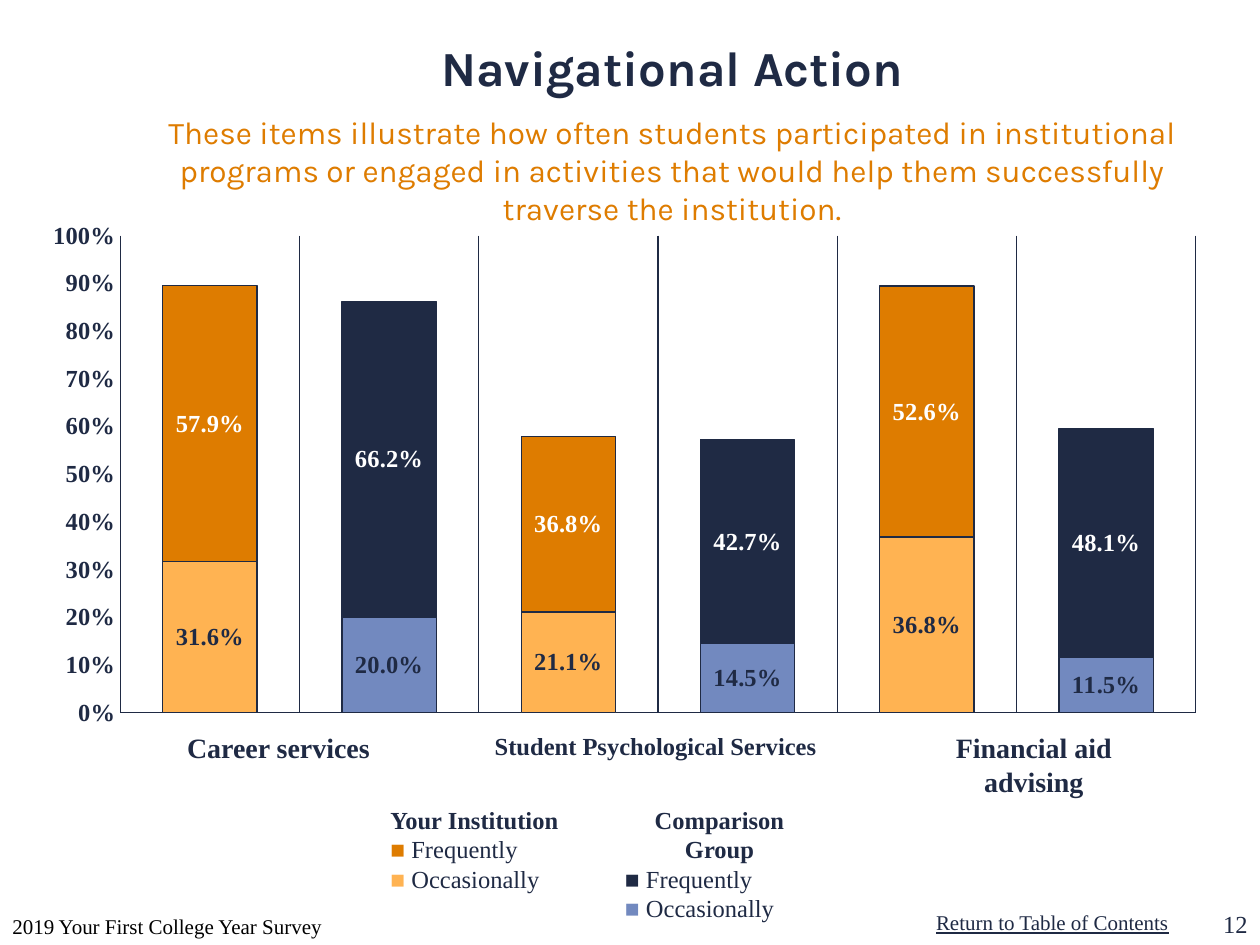
from dataclasses import dataclass

import pptx
import pptx.chart.data
import pptx.dml.color
import pptx.enum.chart
import pptx.enum.text
import pptx.oxml
import pptx.util

Cm = pptx.util.Cm
Pt = pptx.util.Pt
ALIGN = pptx.enum.text.PP_ALIGN
ANCHOR = pptx.enum.text.MSO_ANCHOR


@dataclass(frozen=True)
class Theme:
    navy: str = "1F2A44"
    blue: str = "7289BF"
    orange: str = "DE7C00"
    amber: str = "FFB352"
    white: str = "FFFFFF"
    black: str = "000000"
    heading_font: str = "Karla"
    body_font: str = "Times New Roman"
    title_size: int = 28
    subtitle_size: int = 18
    category_size: int = 16
    text_size: int = 14
    footer_size: int = 12


THEME = Theme()


@dataclass(frozen=True)
class Frame:
    """A place on the page, in centimetres."""
    left: float
    top: float
    width: float
    height: float

    def lengths(self) -> tuple:
        return Cm(self.left), Cm(self.top), Cm(self.width), Cm(self.height)


@dataclass(frozen=True)
class Label:
    text: str
    frame: Frame
    size: int
    align: ALIGN = ALIGN.LEFT
    color: str = THEME.navy
    bold: bool = False
    underline: bool = False
    anchor: ANCHOR = ANCHOR.TOP


@dataclass(frozen=True)
class Legend:
    heading: str
    frame: Frame
    align: ALIGN
    indent: float
    frequent_color: str
    occasional_color: str


@dataclass(frozen=True)
class Answer:
    """One stacked series: own bars and comparison bars alternate."""
    name: str
    values: tuple
    own_color: str
    comparison_color: str
    label_color: str


CATEGORY_TOP = 14.61
LABELS = (
    Label("Career services", Frame(2.54, CATEGORY_TOP, 6.15, 0.94),
          THEME.category_size, ALIGN.CENTER, bold=True),
    Label("Student Psychological Services", Frame(9.5, CATEGORY_TOP, 7.44, 0.86),
          THEME.text_size, ALIGN.CENTER, bold=True),
    Label("Financial aid advising", Frame(17.98, CATEGORY_TOP, 5.72, 1.63),
          THEME.category_size, ALIGN.CENTER, bold=True),
    Label("2019 Your First College Year Survey", Frame(0, 17.78, 8.05, 1.27),
          THEME.footer_size, color=THEME.black, anchor=ANCHOR.BOTTOM),
    Label("Return to Table of Contents", Frame(18.62, 18.21, 5.4, 0.76),
          THEME.footer_size, underline=True),
    Label("12", Frame(24.13, 17.78, 1.27, 1.27),
          THEME.text_size, ALIGN.RIGHT, anchor=ANCHOR.BOTTOM),
)
LEGENDS = (
    Legend("Your Institution", Frame(7.62, 16.1, 4.39, 2.64), ALIGN.LEFT, 0,
           THEME.orange, THEME.amber),
    Legend("Comparison Group", Frame(12.22, 16.1, 4.57, 2.64), ALIGN.CENTER, 0.13,
           THEME.navy, THEME.blue),
)
ANSWERS = (
    Answer("Occasionally", (0.316, 0.2, 0.211, 0.145, 0.368, 0.115),
           THEME.amber, THEME.blue, THEME.navy),
    Answer("Frequently", (0.579, 0.662, 0.368, 0.427, 0.526, 0.481),
           THEME.orange, THEME.navy, THEME.white),
)


def rgb(color: str) -> pptx.dml.color.RGBColor:
    return pptx.dml.color.RGBColor.from_string(color)


def style_font(font, size: int, color: str, bold: bool = False,
               name: str = THEME.body_font) -> None:
    font.name, font.size, font.bold = name, Pt(size), bold
    font.color.rgb = rgb(color)


def add_text_frame(page, frame: Frame, anchor: ANCHOR = ANCHOR.TOP):
    text_frame = page.shapes.add_textbox(*frame.lengths()).text_frame
    text_frame.word_wrap = True
    text_frame.vertical_anchor = anchor
    return text_frame


def add_label(page, label: Label) -> None:
    para = add_text_frame(page, label.frame, label.anchor).paragraphs[0]
    para.text, para.alignment = label.text, label.align
    style_font(para.font, label.size, label.color, label.bold)
    para.font.underline = label.underline


def add_title(page) -> None:
    text_frame = add_text_frame(page, Frame(2.97, 0.64, 21.16, 3.18))
    title, subtitle = text_frame.paragraphs[0], text_frame.add_paragraph()
    title.text = "Navigational Action"
    subtitle.text = ("These items illustrate how often students participated in "
                     "institutional programs or engaged in activities that would "
                     "help them successfully traverse the institution.")
    title.alignment = subtitle.alignment = ALIGN.CENTER
    subtitle.space_before = Pt(9.5)
    style_font(title.font, THEME.title_size, THEME.navy, True, THEME.heading_font)
    style_font(subtitle.font, THEME.subtitle_size, THEME.orange, False,
               THEME.heading_font)


def add_legend(page, legend: Legend) -> None:
    text_frame = add_text_frame(page, legend.frame)
    heading = text_frame.paragraphs[0]
    heading.text, heading.alignment = legend.heading, legend.align
    style_font(heading.font, THEME.text_size, THEME.navy, True)
    for name, color in (("Frequently", legend.frequent_color),
                        ("Occasionally", legend.occasional_color)):
        para = text_frame.add_paragraph()
        para._p.get_or_add_pPr().set("marL", str(Cm(legend.indent)))
        style_font(para.font, THEME.text_size, THEME.navy)
        marker, caption = para.add_run(), para.add_run()
        marker.text, caption.text = "■ ", name
        style_font(marker.font, THEME.text_size, color, True)


def style_line(line, width: float) -> None:
    line.color.rgb, line.width = rgb(THEME.navy), Pt(width)


def style_bar(bar_format, color: str) -> None:
    bar_format.fill.solid()
    bar_format.fill.fore_color.rgb = rgb(color)
    style_line(bar_format.line, 0.75)


def style_series(series, answer: Answer) -> None:
    style_bar(series.format, answer.own_color)
    for index in range(1, len(answer.values), 2):
        style_bar(series.points[index].format, answer.comparison_color)
    labels = series.data_labels
    labels.show_value = True
    labels.number_format, labels.number_format_is_linked = "0.0%", False
    labels.position = pptx.enum.chart.XL_LABEL_POSITION.CENTER
    style_font(labels.font, THEME.text_size, answer.label_color, True)


def style_axes(chart) -> None:
    no_tick = pptx.enum.chart.XL_TICK_MARK.NONE
    categories, values = chart.category_axis, chart.value_axis
    for axis in (categories, values):
        axis.major_tick_mark = axis.minor_tick_mark = no_tick
        style_line(axis.format.line, 1)
    categories.tick_label_position = pptx.enum.chart.XL_TICK_LABEL_POSITION.NONE
    categories.has_major_gridlines = True
    style_line(categories.major_gridlines.format.line, 0.75)
    values.has_major_gridlines = False
    values.minimum_scale, values.maximum_scale, values.major_unit = 0, 1, 0.1
    values.tick_labels.number_format = "0%"
    values.tick_labels.number_format_is_linked = False
    style_font(values.tick_labels.font, THEME.text_size, THEME.navy, True)


def fix_plot_area(chart, **edges: float) -> None:
    """Set the inner plot area as fractions of the chart."""
    namespace = "http://schemas.openxmlformats.org/drawingml/2006/chart"
    modes = '<c:layoutTarget val="inner"/><c:xMode val="edge"/><c:yMode val="edge"/>'
    sizes = "".join(f'<c:{edge} val="{value}"/>' for edge, value in edges.items())
    layout = pptx.oxml.parse_xml(
        f'<c:layout xmlns:c="{namespace}"><c:manualLayout>{modes}{sizes}'
        "</c:manualLayout></c:layout>")
    plot_area = chart._chartSpace.chart.plotArea
    for old_layout in plot_area.findall(f"{{{namespace}}}layout"):
        plot_area.remove(old_layout)
    plot_area.insert(0, layout)


def add_answer_chart(page) -> None:
    data = pptx.chart.data.CategoryChartData(number_format="0.0%")
    data.categories = [str(number + 1) for number in range(len(ANSWERS[0].values))]
    for answer in ANSWERS:
        data.add_series(answer.name, answer.values)
    chart = page.shapes.add_chart(pptx.enum.chart.XL_CHART_TYPE.COLUMN_STACKED,
                                  *Frame(1.07, 4.45, 23.06, 10.31).lengths(), data).chart
    chart.has_title = chart.has_legend = False
    style_font(chart.font, THEME.text_size, THEME.navy)
    plot = chart.plots[0]
    plot.gap_width, plot.overlap, plot.vary_by_categories = 90, 100, False
    for series, answer in zip(plot.series, ANSWERS):
        style_series(series, answer)
    style_axes(chart)
    fix_plot_area(chart, x=0.058, y=0.029, w=0.941, h=0.933)


def main() -> None:
    deck = pptx.Presentation()
    deck.slide_width, deck.slide_height = Cm(25.4), Cm(19.05)
    page = deck.slides.add_slide(deck.slide_layouts[6])
    add_title(page)
    add_answer_chart(page)
    for label in LABELS:
        add_label(page, label)
    for legend in LEGENDS:
        add_legend(page, legend)
    deck.save("out.pptx")


if __name__ == "__main__":
    main()
